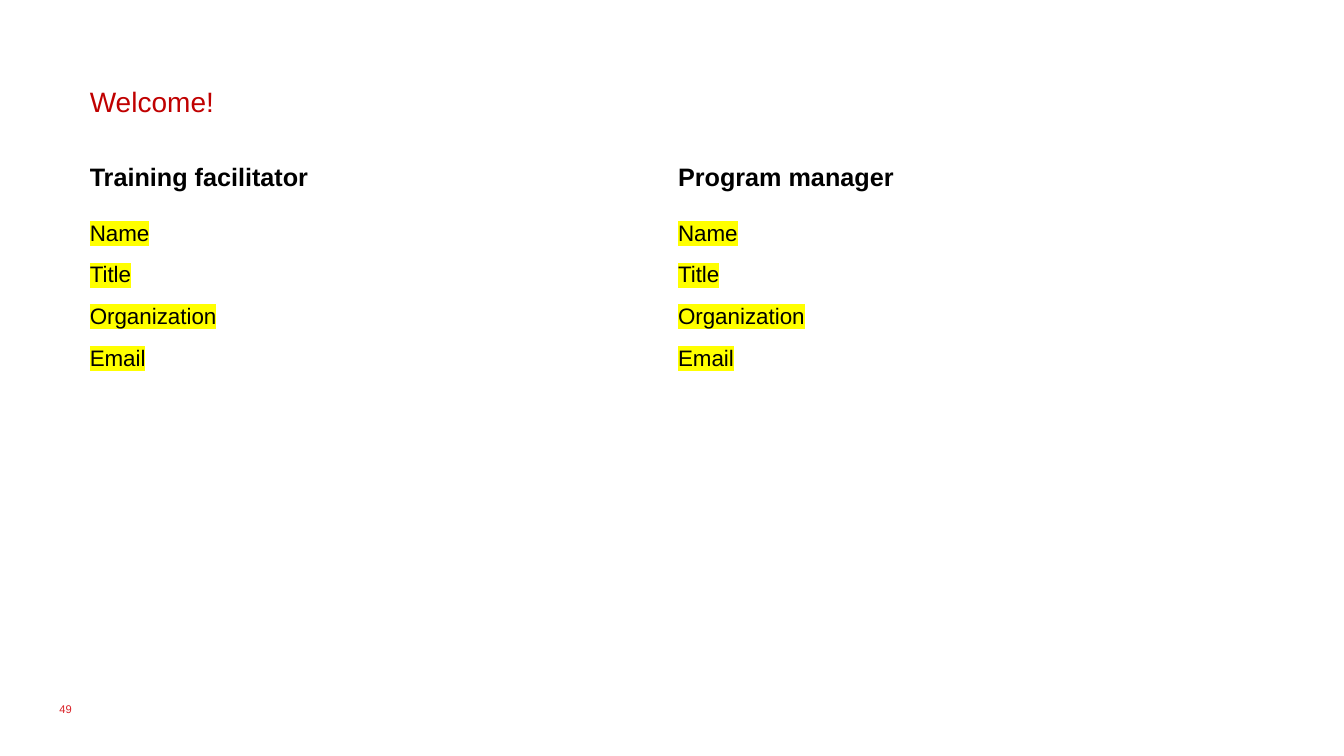
"""Build the welcome slide with contact details for two people."""
from dataclasses import dataclass

from lxml import etree
from pptx import Presentation
from pptx.dml.color import RGBColor
from pptx.enum.text import MSO_ANCHOR, MSO_AUTO_SIZE, PP_ALIGN
from pptx.oxml.ns import qn
from pptx.util import Inches, Pt

LEFT = PP_ALIGN.LEFT
TOP, MIDDLE = MSO_ANCHOR.TOP, MSO_ANCHOR.MIDDLE
NO_FIT = MSO_AUTO_SIZE.NONE


@dataclass(frozen=True)
class Theme:
    """Colours, font and type sizes of the slide."""
    font: str = "Arial"
    title: str = "C00000"
    number: str = "DA2127"
    ink: str = "000000"
    marker: str = "FFFF00"
    title_size: int = 20
    heading_size: int = 18
    body_size: int = 16
    number_size: int = 8


THEME = Theme()
HEADINGS = ["Training facilitator", "Program manager"]
DETAILS = ["Name", "Title", "Organization", "Email"]


def write(p, text, size, color, bold=False):
    """Add a formatted run to a paragraph and return it."""
    p.alignment = LEFT
    r = p.add_run()
    r.text = text
    r.font.color.rgb = RGBColor.from_string(color)
    for name, value in {"name": THEME.font, "size": Pt(size), "bold": bold}.items():
        setattr(r.font, name, value)
    return r


prs = Presentation()
prs.slide_width, prs.slide_height = Inches(13.33), Inches(7.5)
s = prs.slides.add_slide(prs.slide_layouts[5])

title = s.shapes.title
title.left, title.top, title.width, title.height = map(Inches, (0.79, 0.79, 6.26, 0.44))
number = s.shapes.add_textbox(*map(Inches, (0.49, 6.83, 3, 0.4)))
for sp, text, size, color, anchor in [
    (title, "Welcome!", THEME.title_size, THEME.title, TOP),
    (number, "49", THEME.number_size, THEME.number, MIDDLE),
]:
    tf = sp.text_frame
    for name, value in {"word_wrap": True, "auto_size": NO_FIT, "vertical_anchor": anchor}.items():
        setattr(tf, name, value)
    write(tf.paragraphs[0], text, size, color)

table = s.shapes.add_table(2, 2, *map(Inches, (0.79, 1.57, 11.67, 2.48))).table
table.first_row = table.horz_banding = False
for row, height in zip(table.rows, (0.53, 1.95)):
    row.height = Inches(height)

for col, heading in enumerate(HEADINGS):
    head, body = table.cell(0, col), table.cell(1, col)
    for cell in (head, body):
        cell.fill.background()
    write(head.text_frame.paragraphs[0], heading, THEME.heading_size, THEME.ink, bold=True)
    tf = body.text_frame
    for i, detail in enumerate(DETAILS):
        p = tf.add_paragraph() if i else tf.paragraphs[0]
        p.line_spacing, p.space_after = Pt(20.8), Pt(9)
        r = write(p, detail, THEME.body_size, THEME.ink)
        highlight = etree.Element(qn("a:highlight"))
        etree.SubElement(highlight, qn("a:srgbClr"), val=THEME.marker)
        r.font._element.find(qn("a:solidFill")).addnext(highlight) if hasattr(r.font, "_element") else \
            r._r.rPr.find(qn("a:solidFill")).addnext(highlight)

prs.save("out.pptx")
